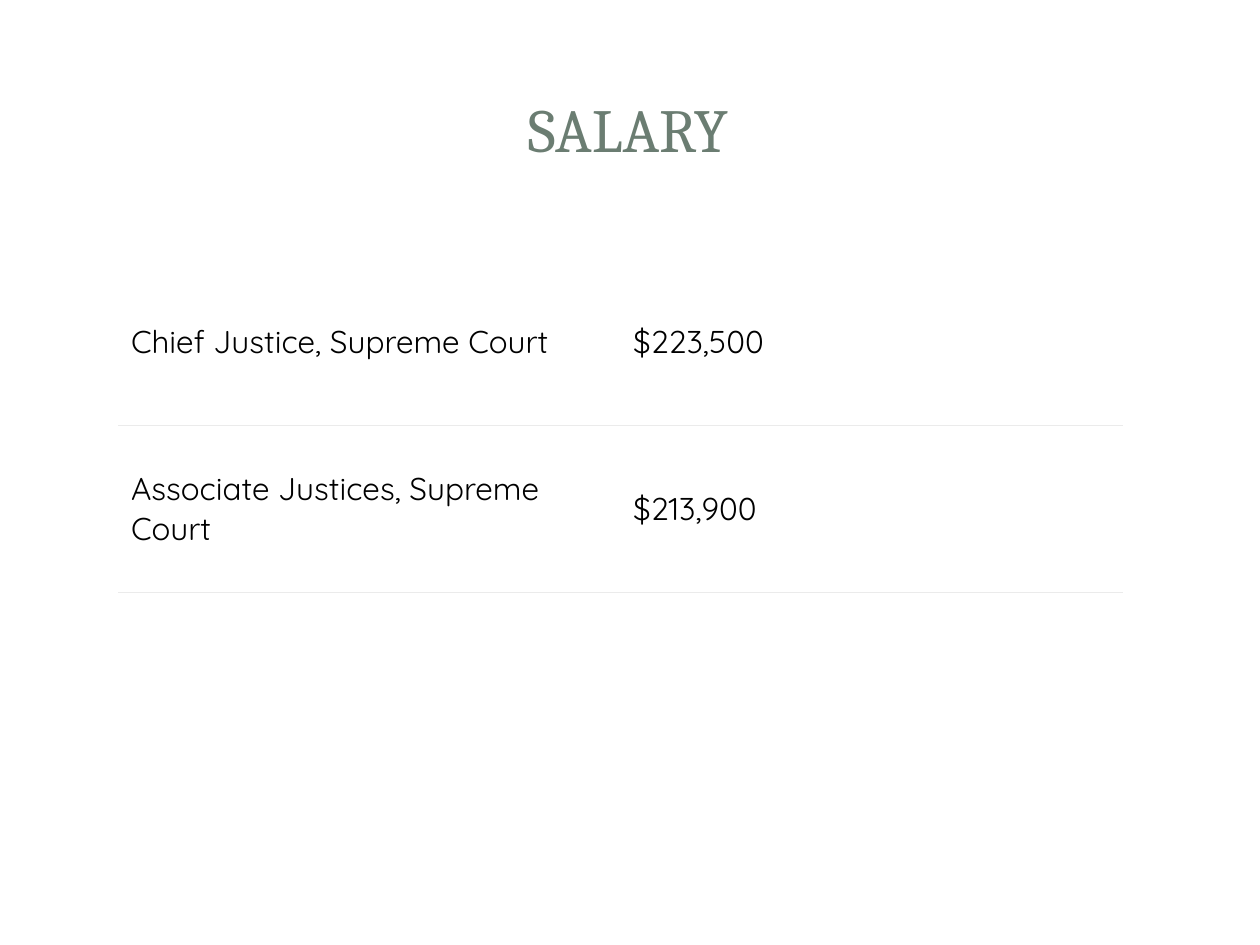
from dataclasses import dataclass

from lxml import etree
from pptx import Presentation
from pptx.dml.color import RGBColor
from pptx.enum.shapes import MSO_SHAPE
from pptx.enum.text import MSO_ANCHOR, PP_ALIGN
from pptx.oxml.ns import qn
from pptx.util import Inches, Pt

RECTANGLE = MSO_SHAPE.RECTANGLE
ROUNDED = MSO_SHAPE.ROUNDED_RECTANGLE
MIDDLE = MSO_ANCHOR.MIDDLE
CENTER = PP_ALIGN.CENTER
TITLE_ONLY = 5
FIRST_SHAPE_POSITION = 2
COLORS = {"title": "6B7D72", "text": "000000", "rule": "EBEBEB", "paper": "FFFFFF"}
RULE_WIDTH = Pt(0.75)
TABLE_WIDTH = Inches(7.97)
TABLE_HEIGHT = Inches(2.65)


@dataclass
class Panel:
    kind: MSO_SHAPE
    left: float
    top: float
    width: float
    height: float
    opacity: int = 100


@dataclass
class Salary:
    position: str
    amount: str


PANELS = [
    Panel(ROUNDED, 0.1, 0.11, 9.8, 7.29),
    Panel(RECTANGLE, 0.3, 0.3, 9.4, 1.45, opacity=83),
    Panel(RECTANGLE, 0.41, 0.41, 9.17, 1.22),
]
SALARIES = [
    Salary("Chief Justice, Supreme Court", "$223,500"),
    Salary("Associate Justices, Supreme Court", "$213,900"),
]


def paint_paper(fill) -> None:
    fill.solid()
    fill.fore_color.rgb = RGBColor.from_string(COLORS["paper"])


def add_panel(page, panel: Panel, depth: int) -> None:
    box = page.shapes.add_shape(
        panel.kind, Inches(panel.left), Inches(panel.top),
        Inches(panel.width), Inches(panel.height),
    )
    box.shadow.inherit = False
    box.line.fill.background()
    paint_paper(box.fill)
    if panel.kind == ROUNDED:
        box.adjustments[0] = 0.017
    if panel.opacity < 100:
        color = box._element.spPr.find(qn("a:solidFill"))[0]
        etree.SubElement(color, qn("a:alpha"), val=str(panel.opacity * 1000))
    page.shapes._spTree.insert(FIRST_SHAPE_POSITION + depth, box._element)


def format_text(text_frame, font: str, size: float, color: str) -> None:
    for para in text_frame.paragraphs:
        for span in para.runs:
            span.font.name = font
            span.font.size = Pt(size)
            span.font.bold = False
            span.font.color.rgb = RGBColor.from_string(COLORS[color])


def set_borders(cell, ruled_sides: str) -> None:
    properties = cell._tc.get_or_add_tcPr()
    for position, side in enumerate("LRTB"):
        line = etree.Element(qn(f"a:ln{side}"))
        if side in ruled_sides:
            line.set("w", str(int(RULE_WIDTH)))
            fill = etree.SubElement(line, qn("a:solidFill"))
            etree.SubElement(fill, qn("a:srgbClr"), val=COLORS["rule"])
        else:
            etree.SubElement(line, qn("a:noFill"))
        properties.insert(position, line)


def fill_cell(cell, text: str, ruled_sides: str) -> None:
    cell.text_frame.text = text
    format_text(cell.text_frame, "Quicksand", 18, "text")
    cell.vertical_anchor = MIDDLE
    paint_paper(cell.fill)
    set_borders(cell, ruled_sides)


def add_title(page, text: str) -> None:
    title = page.shapes.title
    title.left, title.top = Inches(0.47), Inches(0.45)
    title.width, title.height = Inches(9.03), Inches(1.13)
    title.text_frame.text = text
    title.text_frame.vertical_anchor = MIDDLE
    title.text_frame.paragraphs[0].alignment = CENTER
    format_text(title.text_frame, "Cambria", 35, "title")


def add_salary_table(page, salaries: list[Salary]) -> None:
    table = page.shapes.add_table(
        len(salaries), 2, Inches(0.94), Inches(2.05), TABLE_WIDTH, TABLE_HEIGHT
    ).table
    table.first_row = False
    table.horz_banding = False
    for index, salary in enumerate(salaries):
        ruled_sides = "TB" if index else "B"
        for column_index, text in enumerate((salary.position, salary.amount)):
            fill_cell(table.cell(index, column_index), text, ruled_sides)


def main() -> None:
    deck = Presentation()
    deck.slide_width, deck.slide_height = Inches(10), Inches(7.5)
    page = deck.slides.add_slide(deck.slide_layouts[TITLE_ONLY])
    for depth, panel in enumerate(PANELS):
        add_panel(page, panel, depth)
    add_title(page, "SALARY")
    add_salary_table(page, SALARIES)
    deck.save("out.pptx")


if __name__ == "__main__":
    main()
